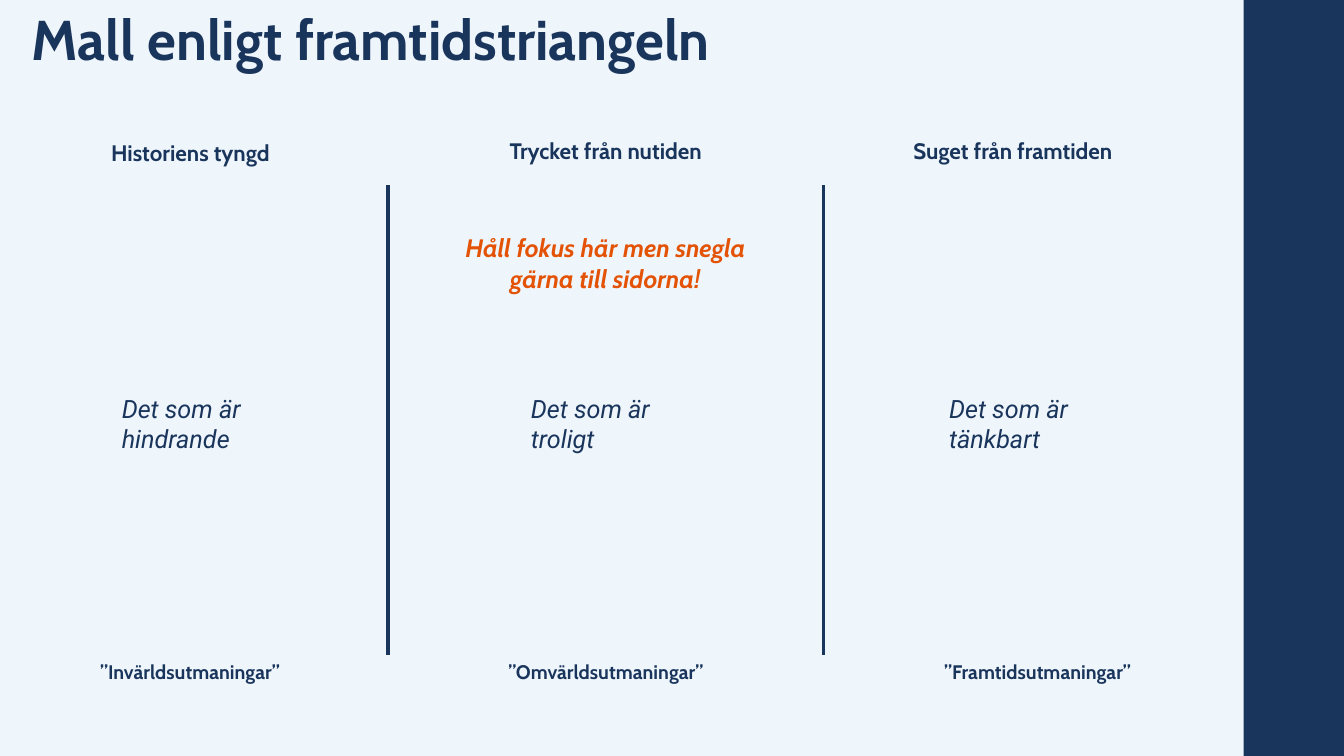
from dataclasses import dataclass

from lxml import etree
from pptx import Presentation
from pptx.dml.color import RGBColor
from pptx.enum.shapes import MSO_CONNECTOR, MSO_SHAPE
from pptx.enum.text import MSO_ANCHOR, PP_ALIGN
from pptx.oxml.ns import qn
from pptx.util import Cm, Pt

STRAIGHT = MSO_CONNECTOR.STRAIGHT
RECTANGLE = MSO_SHAPE.RECTANGLE
TOP = MSO_ANCHOR.TOP
LEFT, CENTER = PP_ALIGN.LEFT, PP_ALIGN.CENTER

SLIDE_WIDTH, SLIDE_HEIGHT = 33.87, 19.05
NAVY, ORANGE, PALE = "1A355C", "E35205", "EEF5FB"
HEADING_FONT, BODY_FONT = "Cabin", "Roboto"
COLUMN_TOP, COLUMN_BOTTOM = 4.65, 16.51


@dataclass
class Column:
    """One perspective; each span is an offset from the column's left and a width, in cm."""
    left: float
    width: float
    heading: str
    heading_span: tuple
    heading_top: float
    note: str
    note_span: tuple
    challenge: str
    challenge_span: tuple


COLUMNS = [
    Column(0, 9.78, "Historiens tyngd", (2.41, 4.78), 3.38,
           "Det som är\nhindrande", (2.82, 3.53),
           "”Invärldsutmaningar”", (2.11, 5.36)),
    Column(9.78, 10.97, "Trycket från nutiden", (0, 10.97), 3.33,
           "Det som är\ntroligt", (3.35, 5.74),
           "”Omvärldsutmaningar”", (2.62, 5.74)),
    Column(20.75, 10.59, "Suget från framtiden", (1.83, 5.89), 3.33,
           "Det som är\ntänkbart", (2.92, 4.75),
           "”Framtidsutmaningar”", (2.62, 5.56)),
]


def rgb(value):
    """Return the colour for a hex string."""
    return RGBColor.from_string(value)


def write_text(frame, text, size, font=HEADING_FONT, color=NAVY, bold=False,
               italic=False, align=LEFT, spacing=1.0, wrap=True):
    """Fill a text frame, one paragraph per line, in a single format."""
    frame.text = text
    frame.word_wrap = wrap
    frame.vertical_anchor = TOP
    for paragraph in frame.paragraphs:
        paragraph.alignment = align
        paragraph.line_spacing = spacing
        for run in paragraph.runs:
            run.font.name = font
            run.font.size = Pt(size)
            run.font.bold = bold
            run.font.italic = italic
            run.font.color.rgb = rgb(color)


def add_text(slide, left, top, width, height, text, **style):
    """Add a formatted text box, with its place in cm."""
    box = slide.shapes.add_textbox(Cm(left), Cm(top), Cm(width), Cm(height))
    write_text(box.text_frame, text, **style)


def draw_side_band(slide, left, top, width, height):
    """Draw the dark band along the slide edge."""
    band = slide.shapes.add_shape(RECTANGLE, Cm(left), Cm(top), Cm(width), Cm(height))
    band.shadow.inherit = False
    band.fill.solid()
    band.fill.fore_color.rgb = rgb(NAVY)
    band.line.fill.background()


def draw_title(slide, left, top, width, height):
    """Place and format the title placeholder."""
    title = slide.shapes.title
    title.left, title.top = Cm(left), Cm(top)
    title.width, title.height = Cm(width), Cm(height)
    frame = title.text_frame
    frame.margin_left = frame.margin_right = 0
    frame.margin_top = frame.margin_bottom = 0
    write_text(frame, "Mall enligt framtidstriangeln", size=40, bold=True, spacing=0.9)


def draw_divider(slide, x, top, bottom):
    """Draw a vertical line between two columns."""
    divider = slide.shapes.add_connector(STRAIGHT, Cm(x), Cm(bottom), Cm(x), Cm(top))
    divider.line.color.rgb = rgb(NAVY)
    divider.line.width = Pt(2.5)
    etree.SubElement(divider._element.spPr, qn("a:effectLst"))


def draw_column(slide, column, top, bottom):
    """Draw the heading, note and challenge of one column."""
    offset, width = column.heading_span
    add_text(slide, column.left + offset, column.heading_top, width, 0.94,
             column.heading, size=16, bold=True, align=CENTER, wrap=False)
    offset, width = column.note_span
    add_text(slide, column.left + offset, top + 5.13, width, 1.8,
             column.note, size=18, font=BODY_FONT, italic=True,
             wrap=width > 4)
    offset, width = column.challenge_span
    add_text(slide, column.left + offset, bottom, width, 0.86,
             column.challenge, size=14, bold=True, align=CENTER, wrap=False)


def draw_focus(slide, left, top, width, height):
    """Draw the orange reminder in the middle column."""
    add_text(slide, left, top, width, height,
             "Håll fokus här men snegla gärna till sidorna!",
             size=18, color=ORANGE, bold=True, italic=True, align=CENTER)


def main():
    """Build and save the slide."""
    deck = Presentation()
    deck.slide_width, deck.slide_height = Cm(SLIDE_WIDTH), Cm(SLIDE_HEIGHT)
    slide = deck.slides.add_slide(deck.slide_layouts.get_by_name("Title Only"))
    slide.background.fill.solid()
    slide.background.fill.fore_color.rgb = rgb(PALE)

    last = COLUMNS[-1]
    band_left = last.left + last.width
    draw_side_band(slide, band_left, 0, SLIDE_WIDTH - band_left, SLIDE_HEIGHT)
    draw_title(slide, 0.79, 0.3, 26.59, 3.07)
    for column in COLUMNS[1:]:
        draw_divider(slide, column.left, COLUMN_TOP, COLUMN_BOTTOM)
    for column in COLUMNS:
        draw_column(slide, column, COLUMN_TOP, COLUMN_BOTTOM)
    draw_focus(slide, COLUMNS[1].left + 1.45, COLUMN_TOP + 1.09, 8.05, 1.8)
    deck.save("out.pptx")


if __name__ == "__main__":
    main()
